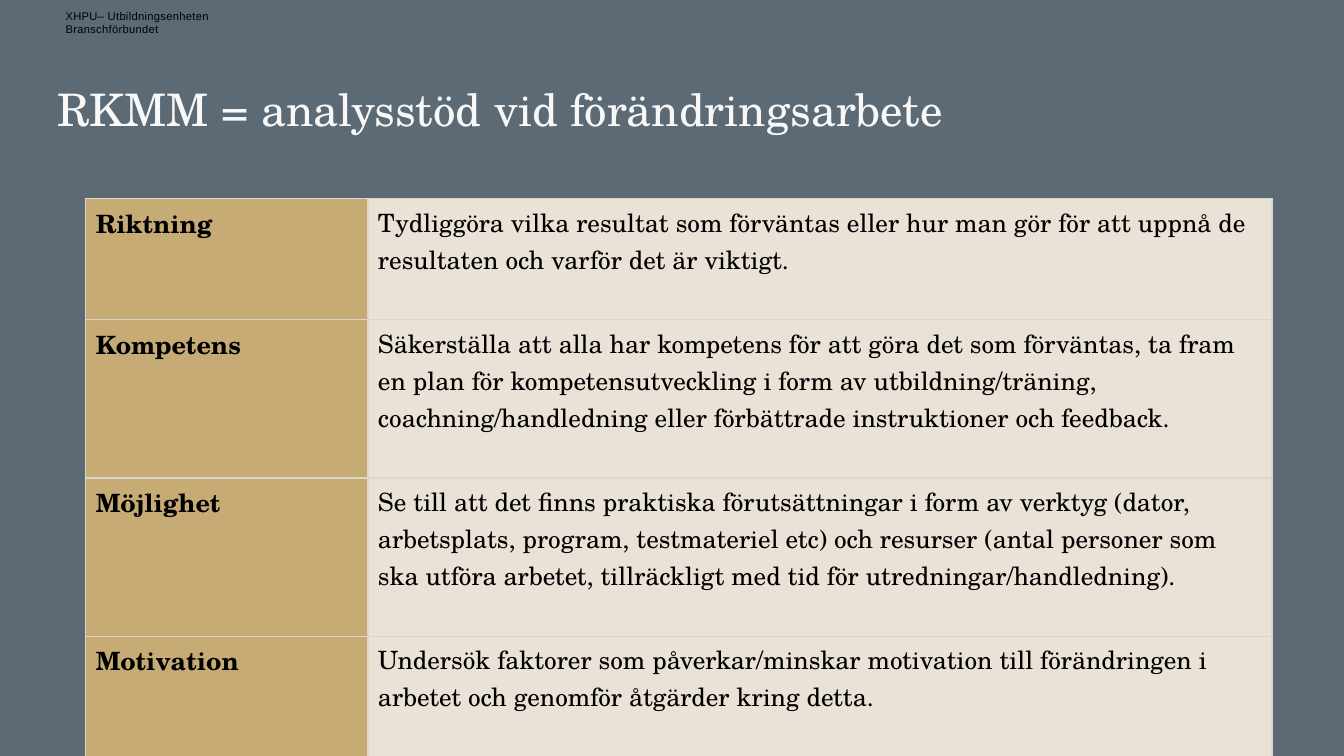
from dataclasses import dataclass

from lxml.etree import SubElement
from pptx import Presentation
from pptx.dml.color import RGBColor
from pptx.enum.text import MSO_ANCHOR as Anchor
from pptx.oxml.ns import qn
from pptx.util import Pt

SLATE = RGBColor(0x5C, 0x6A, 0x75)
OFF_WHITE = RGBColor(0xF8, 0xF8, 0xF8)
BLACK = RGBColor(0, 0, 0)
GOLD = RGBColor(0xC6, 0xAB, 0x74)
SAND = RGBColor(0xEA, 0xE2, 0xD6)
BORDER = RGBColor(0xDB, 0xD8, 0xC9)
SERIF = "TeX Gyre Schola"


@dataclass
class Factor:
    name: str
    advice: str
    height: float


FACTORS = [
    Factor("Riktning",
           "Tydliggöra vilka resultat som förväntas eller hur man gör för att "
           "uppnå de resultaten och varför det är viktigt.", 86.6),
    Factor("Kompetens",
           "Säkerställa att alla har kompetens för att göra det som förväntas, "
           "ta fram en plan för kompetensutveckling i form av "
           "utbildning/träning, coachning/handledning eller förbättrade "
           "instruktioner och feedback.", 113),
    Factor("Möjlighet",
           "Se till att det finns praktiska förutsättningar i form av verktyg "
           "(dator, arbetsplats, program, testmateriel etc) och resurser "
           "(antal personer som ska utföra arbetet, tillräckligt med tid för "
           "utredningar/handledning).", 113),
    Factor("Motivation",
           "Undersök faktorer som påverkar/minskar motivation till "
           "förändringen i arbetet och genomför åtgärder kring detta.", 86.6),
]


def write(frame, text: str, *, size: float, font: str = SERIF,
          color: RGBColor = BLACK, bold: bool = False,
          line_spacing: float | None = None, tracking: int = 0) -> None:
    """Fill a text frame, one paragraph per line of text."""
    frame.word_wrap = True
    for index, line in enumerate(text.split("\n")):
        para = frame.add_paragraph() if index else frame.paragraphs[0]
        if line_spacing:
            para.line_spacing = line_spacing
        span = para.add_run()
        span.text = line
        span.font.size, span.font.name, span.font.bold = Pt(size), font, bold
        span.font.color.rgb = color
        if tracking:
            span.font._element.set("spc", str(tracking))


def add_text(page, text: str, left: float, top: float, width: float,
             height: float, anchor: Anchor = Anchor.TOP, **text_format) -> None:
    box = page.shapes.add_textbox(Pt(left), Pt(top), Pt(width), Pt(height))
    frame = box.text_frame
    frame.margin_left = frame.margin_right = 0
    frame.margin_top = frame.margin_bottom = 0
    frame.vertical_anchor = anchor
    write(frame, text, **text_format)


def fill_cell(cell, text: str, fill: RGBColor, bold: bool) -> None:
    write(cell.text_frame, text, size=18, bold=bold)
    properties = cell._tc.get_or_add_tcPr()
    for side in ("a:lnL", "a:lnR", "a:lnT", "a:lnB"):
        line = SubElement(properties, qn(side), w=str(Pt(1)))
        solid = SubElement(line, qn("a:solidFill"))
        SubElement(solid, qn("a:srgbClr"), val=str(BORDER))
    cell.fill.solid()
    cell.fill.fore_color.rgb = fill


def add_factor_table(page, left: float, top: float,
                     widths: tuple[float, float]) -> None:
    total_height = sum(factor.height for factor in FACTORS)
    table = page.shapes.add_table(
        len(FACTORS), len(widths), Pt(left), Pt(top),
        Pt(sum(widths)), Pt(total_height)).table
    table.first_row = table.horz_banding = False
    for column, width in zip(table.columns, widths):
        column.width = Pt(width)
    for index, factor in enumerate(FACTORS):
        table.rows[index].height = Pt(factor.height)
        fill_cell(table.cell(index, 0), factor.name, GOLD, bold=True)
        fill_cell(table.cell(index, 1), factor.advice, SAND, bold=False)


def main() -> None:
    deck = Presentation()
    deck.slide_width, deck.slide_height = Pt(960), Pt(540)
    page = deck.slides.add_slide(deck.slide_layouts[6])
    page.background.fill.solid()
    page.background.fill.fore_color.rgb = SLATE

    # Sender and title
    add_text(page, "XHPU– Utbildningsenheten\nBranschförbundet",
             46.8, 6.5, 157.7, 19.4, Anchor.BOTTOM,
             size=8, font="Arial", tracking=20)
    add_text(page, "RKMM = analysstöd vid förändringsarbete",
             41, 62.6, 832.3, 90, size=32, color=OFF_WHITE, line_spacing=0.9)

    # Four factors with advice
    add_factor_table(page, 61.2, 141.8, (201.6, 645.8))
    deck.save("out.pptx")


if __name__ == "__main__":
    main()
